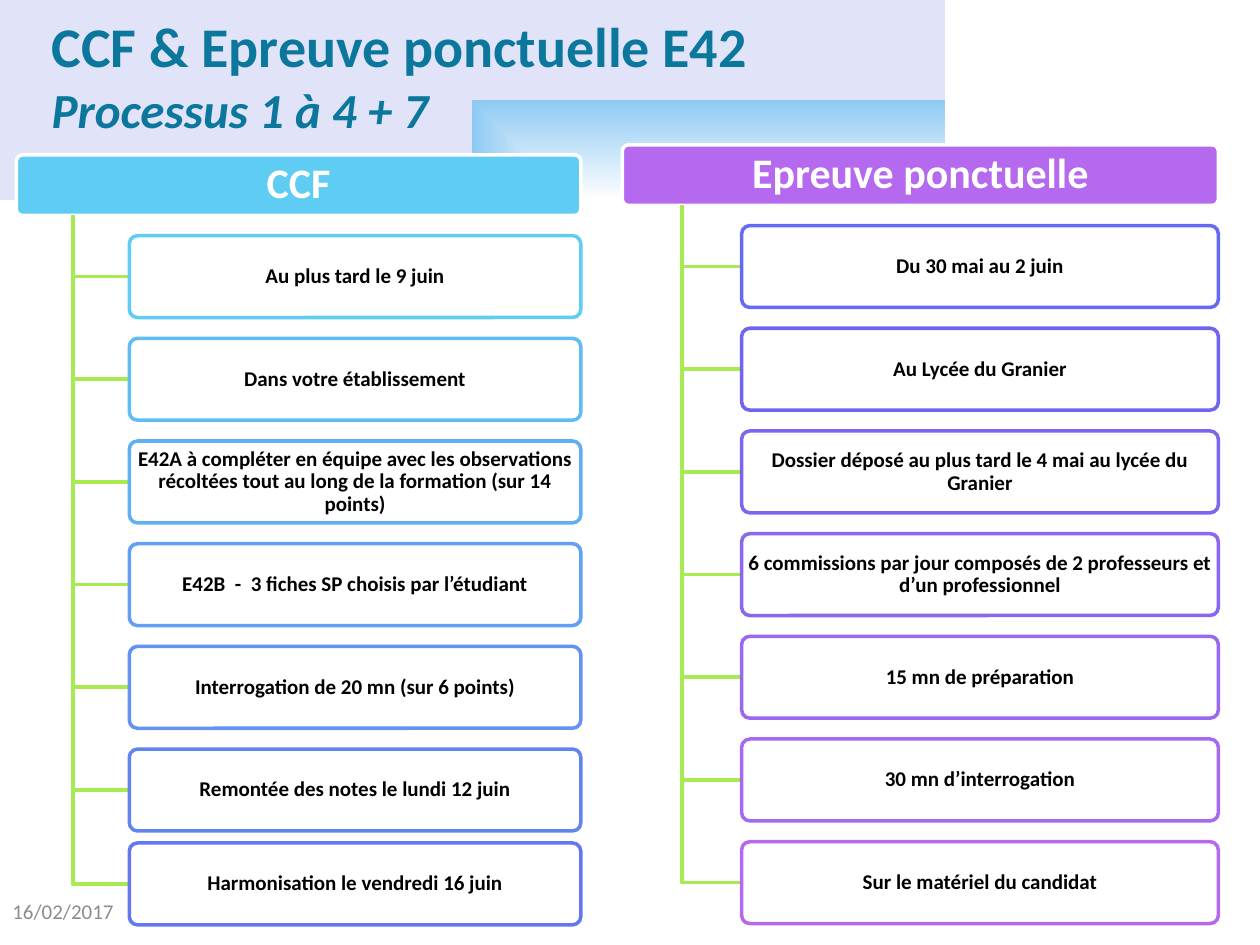
from lxml.etree import SubElement
from pptx import Presentation
from pptx.dml.color import RGBColor
from pptx.enum.shapes import MSO_SHAPE as Shape
from pptx.enum.text import MSO_ANCHOR as Anchor, MSO_AUTO_SIZE as AutoSize, PP_ALIGN as Align
from pptx.oxml import parse_xml
from pptx.oxml.ns import nsdecls, qn
from pptx.util import Inches, Pt

ROW_HEIGHT = 0.65
ROW_STEP = 0.815
BRANCH_COLOR = "A7EA52"
BANNER_STOPS = [(0, "FFFFFF"), (100, "8FCAF3"), (100, "C1C7F2"), (100, "E1E3F8")]

CCF_STEPS = [
    ("Au plus tard le 9 juin", "5ECCF3"),
    ("Dans votre établissement", "5FBDF3"),
    ("E42A à compléter en équipe avec les observations récoltées tout au long "
     "de la formation (sur 14 points)", "60AFF2"),
    ("E42B  -  3 fiches SP choisis par l’étudiant", "61A0F2"),
    ("Interrogation de 20 mn (sur 6 points)", "6292F2"),
    ("Remontée des notes le lundi 12 juin", "6284F1"),
    ("Harmonisation le vendredi 16 juin", "6377F1"),
]
EXAM_STEPS = [
    ("Du 30 mai au 2 juin", "646AF1"),
    ("Au Lycée du Granier", "6E65F0"),
    ("Dossier déposé au plus tard le 4 mai au lycée du Granier", "7C66F0"),
    ("6 commissions par jour composés de 2 professeurs et d’un professionnel", "8B67F0"),
    ("15 mn de préparation", "9968EF"),
    ("30 mn d’interrogation", "A769EF"),
    ("Sur le matériel du candidat", "B469EF"),
]


def rgb(color):
    """Turn a hex string into a colour."""
    return RGBColor.from_string(color)


def add_span(para, text, size, color, bold=False, italic=False):
    """Add formatted text to a paragraph."""
    span = para.add_run()
    span.text = text
    font = span.font
    font.name, font.size = "Calibri", Pt(size)
    font.bold, font.italic = bold, italic
    font.color.rgb = rgb(color)


def add_banner(page):
    """Add the gradient banner behind the title."""
    banner = page.shapes.add_shape(Shape.RECTANGLE, 0, 0, Inches(7.5), Inches(1.59))
    banner.shadow.inherit = False
    banner.line.fill.background()
    stops = "".join(
        f'<a:gs pos="{position * 1000}"><a:srgbClr val="{color}"/></a:gs>'
        for position, color in BANNER_STOPS
    )
    gradient = parse_xml(
        f'<a:gradFill {nsdecls("a")} rotWithShape="1"><a:gsLst>{stops}</a:gsLst>'
        '<a:path path="rect"><a:fillToRect l="100000" t="100000"/></a:path></a:gradFill>'
    )
    banner.element.spPr.find(qn("a:prstGeom")).addnext(gradient)
    page.shapes._spTree.insert(2, banner.element)


def format_title(page):
    """Place and fill the title."""
    title = page.shapes.title
    title.left, title.top = Inches(0.31), Inches(0.16)
    title.width, title.height = Inches(9), Inches(0.87)
    frame = title.text_frame
    frame.auto_size = AutoSize.NONE
    frame.vertical_anchor = Anchor.MIDDLE
    para = frame.paragraphs[0]
    para.alignment = Align.LEFT
    add_span(para, "CCF & Epreuve ponctuelle E42", 32, "0C779D", bold=True)
    para.add_line_break()
    add_span(para, "Processus 1 à 4 + 7", 28, "0C779D", bold=True, italic=True)


def add_box(shapes, text, left, top, width, height, fill, line, size, color, opacity=100):
    """Add a rounded box with centred bold text."""
    box = shapes.add_shape(
        Shape.ROUNDED_RECTANGLE, Inches(left), Inches(top), Inches(width), Inches(height)
    )
    box.adjustments[0] = 0.1
    box.shadow.inherit = False
    box.fill.solid()
    box.fill.fore_color.rgb = rgb(fill)
    if opacity < 100:
        tint = box.element.spPr.find(qn("a:solidFill")).find(qn("a:srgbClr"))
        SubElement(tint, qn("a:alpha")).set("val", str(opacity * 1000))
    box.line.color.rgb = rgb(line)
    box.line.width = Pt(2)
    frame = box.text_frame
    frame.word_wrap = True
    frame.vertical_anchor = Anchor.MIDDLE
    frame.margin_left = frame.margin_right = Inches(0.01)
    frame.margin_top = frame.margin_bottom = 0
    para = frame.paragraphs[0]
    para.alignment = Align.CENTER
    para.line_spacing = 0.9
    add_span(para, text, size, color, bold=True)


def add_branch(shapes, trunk, start, end, middle):
    """Add an elbow line from the header down to a step."""
    builder = shapes.build_freeform(Inches(trunk), Inches(start))
    builder.add_line_segments(
        [(Inches(trunk), Inches(middle)), (Inches(end), Inches(middle))], close=False
    )
    branch = builder.convert_to_shape()
    branch.shadow.inherit = False
    branch.fill.background()
    branch.line.color.rgb = rgb(BRANCH_COLOR)
    branch.line.width = Pt(2)


def add_column(page, heading, steps, left, top, width, height, fill, last_top):
    """Add a header with its steps hanging from a trunk."""
    shapes = page.shapes.add_group_shape().shapes
    add_box(shapes, heading, left, top, width, height, fill, "FFFFFF", 24, "FFFFFF")
    trunk, step_left = left + width * 0.1, left + width * 0.2
    bottom = top + height
    for row, (text, color) in enumerate(steps):
        step_top = min(bottom + 0.16 + row * ROW_STEP, last_top)
        add_branch(shapes, trunk, bottom, step_left, step_top + ROW_HEIGHT / 2)
        add_box(shapes, text, step_left, step_top, width * 0.8, ROW_HEIGHT,
                "FFFFFF", color, 12, "000000", opacity=90)


def add_date(page, text):
    """Add the date at the bottom left."""
    box = page.shapes.add_textbox(0, Inches(7.11), Inches(2.33), Inches(0.24))
    frame = box.text_frame
    frame.word_wrap = True
    frame.vertical_anchor = Anchor.MIDDLE
    add_span(frame.paragraphs[0], text, 12, "8C8C8C")


def main():
    """Build the slide and save it."""
    deck = Presentation()
    deck.slide_width, deck.slide_height = Inches(10), Inches(7.5)
    page = deck.slides.add_slide(deck.slide_layouts[5])
    add_banner(page)
    format_title(page)
    add_column(page, "CCF", CCF_STEPS, 0.13, 1.23, 4.48, 0.48, "5ECCF3", last_top=6.69)
    add_column(page, "Epreuve ponctuelle", EXAM_STEPS, 4.94, 1.15, 4.73, 0.48, "B469EF",
               last_top=6.69)
    add_date(page, "16/02/2017")
    deck.save("out.pptx")


if __name__ == "__main__":
    main()
